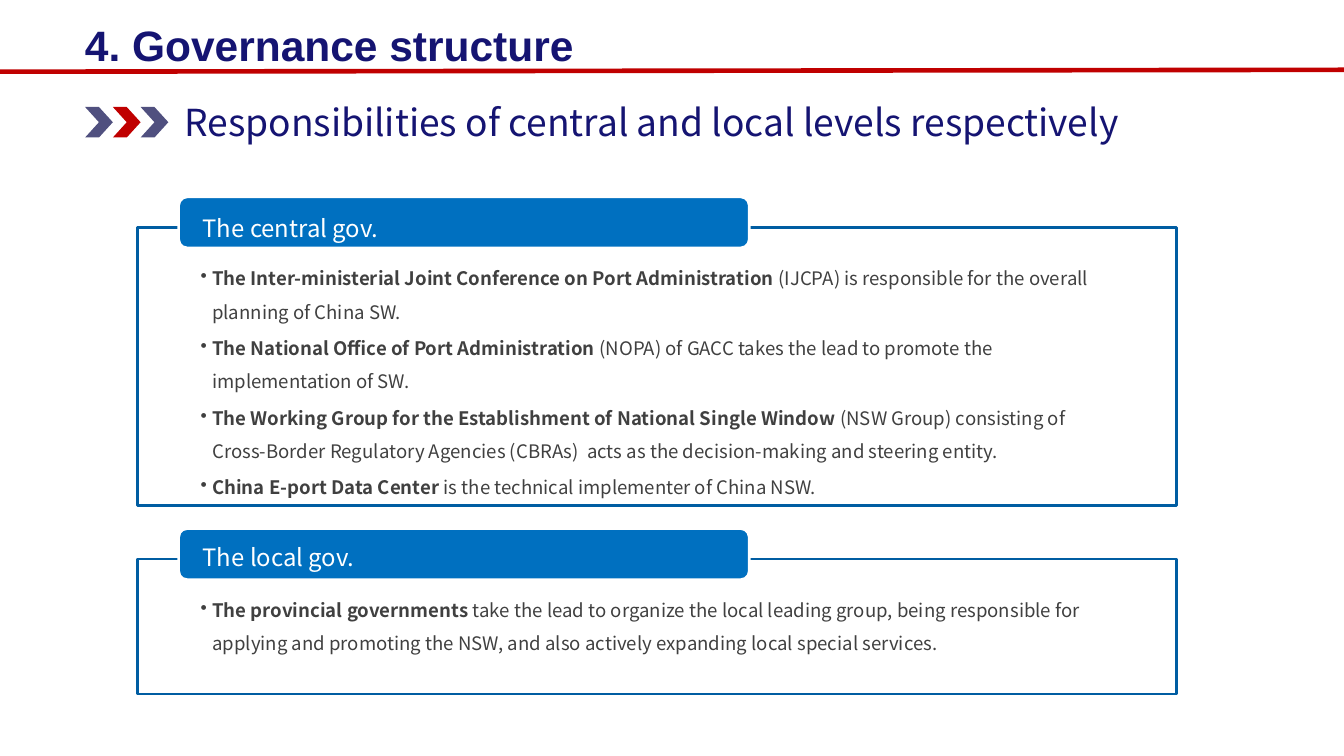
from lxml import etree
from pptx import Presentation
from pptx.dml.color import RGBColor
from pptx.enum.shapes import MSO_CONNECTOR, MSO_SHAPE
from pptx.enum.text import MSO_ANCHOR
from pptx.oxml.ns import qn
from pptx.util import Pt

RECTANGLE = MSO_SHAPE.RECTANGLE
ROUNDED = MSO_SHAPE.ROUNDED_RECTANGLE
CHEVRON = MSO_SHAPE.CHEVRON
STRAIGHT = MSO_CONNECTOR.STRAIGHT
TOP, MIDDLE = MSO_ANCHOR.TOP, MSO_ANCHOR.MIDDLE

NAVY = RGBColor(0x15, 0x14, 0x72)
RED = RGBColor(0xC0, 0x00, 0x00)
SLATE = RGBColor(0x50, 0x50, 0x7F)
BLUE = RGBColor(0x00, 0x70, 0xC0)
FRAME_BLUE = RGBColor(0x00, 0x5D, 0xA2)
GRAY = RGBColor(0x40, 0x40, 0x40)
WHITE = RGBColor(0xFF, 0xFF, 0xFF)

HEAD_FONT = "Arial"
BODY_FONT = "Noto Sans CJK SC"

CENTRAL_DUTIES = [
    ("The Inter-ministerial Joint Conference on Port Administration",
     " (IJCPA) is responsible for the overall planning of China SW."),
    ("The National Office of Port Administration ",
     "(NOPA) of GACC takes the lead to promote the implementation of SW."),
    ("The Working Group for the Establishment of National Single Window ",
     "(NSW Group) consisting of Cross-Border Regulatory Agencies (CBRAs)  "
     "acts as the decision-making and steering entity."),
    ("China E-port Data Center ", "is the technical implementer of China NSW."),
]
LOCAL_DUTIES = [
    ("The provincial governments ",
     "take the lead to organize the local leading group, being responsible for "
     "applying and promoting the NSW, and also actively expanding local special services."),
]


class GovernancePage:
    """Draws the elements of the governance slide in one shared style."""

    def __init__(self, page):
        self.page = page

    def shape(self, kind, left, top, width, height, fill, line=None):
        shape = self.page.shapes.add_shape(kind, Pt(left), Pt(top), Pt(width), Pt(height))
        shape.shadow.inherit = False
        shape.fill.solid()
        shape.fill.fore_color.rgb = fill
        if line is None:
            shape.line.fill.background()
        else:
            shape.line.color.rgb = line
            shape.line.width = Pt(2)
        return shape

    def rule(self, left, top, right, bottom):
        rule = self.page.shapes.add_connector(STRAIGHT, Pt(left), Pt(top), Pt(right), Pt(bottom))
        rule.line.color.rgb = RED
        rule.line.width = Pt(3.5)
        etree.SubElement(rule._element.spPr, qn("a:effectLst"))

    def text_frame(self, left, top, width, height, insets, anchor=TOP):
        box = self.page.shapes.add_textbox(Pt(left), Pt(top), Pt(width), Pt(height))
        frame = box.text_frame
        frame.word_wrap = True
        frame.vertical_anchor = anchor
        frame.margin_left, frame.margin_top, frame.margin_right, frame.margin_bottom = map(Pt, insets)
        return frame

    def style(self, font, name, size, color, bold=False):
        font.name, font.size, font.bold = name, Pt(size), bold
        font.color.rgb = color

    def label(self, text, area, insets, font, size, color, bold=False, anchor=TOP):
        frame = self.text_frame(*area, insets, anchor)
        frame.text = text
        self.style(frame.paragraphs[0].runs[0].font, font, size, color, bold)
        return frame.paragraphs[0]

    def duties(self, area, items):
        frame = self.text_frame(*area, (47.5, 21.6, 47.5, 7.2))
        for index, item in enumerate(items):
            para = frame.add_paragraph() if index else frame.paragraphs[0]
            para.line_spacing = 1.5
            para.space_after = Pt(2)
            properties = para._p.get_or_add_pPr()
            properties.set("marL", str(Pt(8.64)))
            properties.set("indent", str(Pt(-8.64)))
            etree.SubElement(properties, qn("a:buChar")).set("char", "•")
            for text, bold in zip(item, (True, False)):
                span = para.add_run()
                span.text = text
                self.style(span.font, BODY_FONT, 14, GRAY, bold)

    def section(self, title, items, top, height, text_height, tab_top, label_top):
        left, width = 103.7, 782.6
        frame = self.shape(RECTANGLE, left, top, width, height, WHITE, FRAME_BLUE)
        color = frame._element.spPr.find(qn("a:solidFill"))[0]
        etree.SubElement(color, qn("a:alpha")).set("val", "90000")
        self.duties((left, top, width, text_height), items)
        self.shape(ROUNDED, 134.6, tab_top, 429.8, 38.5, BLUE, WHITE)
        para = self.label(title, (136.1, label_top, 427, 27.4), (16.6, 0, 16.6, 0),
                          BODY_FONT, 18, WHITE, anchor=MIDDLE)
        para.line_spacing = 0.9


def main():
    deck = Presentation()
    deck.slide_width, deck.slide_height = Pt(1012.3), Pt(569.5)
    page = GovernancePage(deck.slides.add_slide(deck.slide_layouts[6]))

    page.label("4. Governance structure", (56.9, 7.2, 450, 40.3), (7.2, 6.8, 7.2, 3.6),
               HEAD_FONT, 32, NAVY, bold=True)
    page.rule(0, 54, 1013.8, 52.6)
    page.section("The central gov.", CENTRAL_DUTIES, 171.4, 209.5, 215.3, 148.3, 159.1)
    page.section("The local gov.", LOCAL_DUTIES, 421.2, 101.5, 101.5, 398.2, 407.5)
    page.label("Responsibilities of central and local levels respectively",
               (131.8, 71.3, 797.8, 41), (7.2, 3.6, 7.2, 3.6), BODY_FONT, 28, NAVY)
    for index, color in enumerate((SLATE, RED, SLATE)):
        page.shape(CHEVRON, 64.1 + index * 20.9, 80.6, 20.9, 23, color)

    deck.save("out.pptx")


if __name__ == "__main__":
    main()
